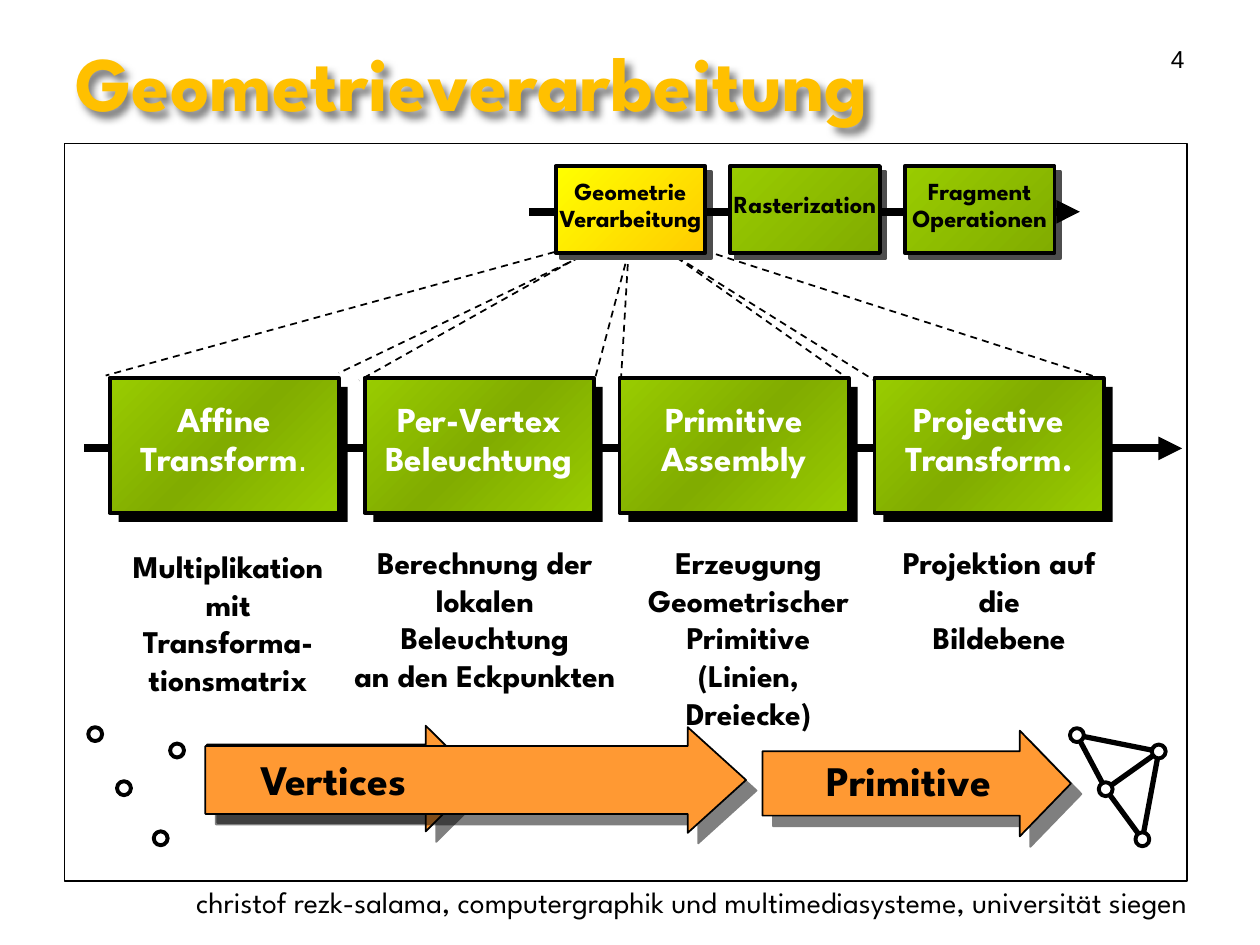
from dataclasses import dataclass

from lxml.etree import SubElement
from pptx import Presentation
from pptx.dml.color import RGBColor
from pptx.enum.dml import MSO_LINE
from pptx.enum.shapes import MSO_CONNECTOR, MSO_SHAPE
from pptx.enum.text import MSO_ANCHOR, PP_ALIGN
from pptx.oxml import parse_xml
from pptx.oxml.ns import nsdecls, qn
from pptx.slide import Slide
from pptx.util import Cm, Pt

BLACK, WHITE, ORANGE = "000000", "FFFFFF", "FF9933"
GREEN, DARK_GREEN = "99CC00", "81AC00"


def rgb(value):
    return RGBColor.from_string(value)


def add_shadow(shape, distance, blur=0):
    """Give a shape a half-transparent shadow towards the lower right."""
    effects = shape._element.spPr.get_or_add_effectLst()
    shadow = SubElement(effects, qn("a:outerShdw"), dist=str(Pt(distance)),
                        blurRad=str(Pt(blur)), dir="2700000", algn="ctr", rotWithShape="0")
    color = SubElement(shadow, qn("a:srgbClr"), val=BLACK)
    SubElement(color, qn("a:alpha"), val="50000")


def gradient_fill(shape, colors):
    """Fill a shape with evenly spaced colours from top left to bottom right."""
    step = 100000 // (len(colors) - 1)
    stops = "".join(f'<a:gs pos="{index * step}"><a:srgbClr val="{color}"/></a:gs>'
                    for index, color in enumerate(colors))
    properties = shape._element.spPr
    properties.find(qn("a:prstGeom")).addnext(parse_xml(
        f'<a:gradFill {nsdecls("a")}><a:gsLst>{stops}</a:gsLst>'
        '<a:lin ang="2700000" scaled="1"/></a:gradFill>'))


@dataclass
class Canvas:
    slide: Slide
    font: str = "League Spartan"

    def paint(self, shape, fill, line, width):
        shape.shadow.inherit = False
        if isinstance(fill, list):
            gradient_fill(shape, fill)
        elif fill:
            shape.fill.solid()
            shape.fill.fore_color.rgb = rgb(fill)
        else:
            shape.fill.background()
        if line:
            shape.line.color.rgb = rgb(line)
            shape.line.width = Pt(width)
        else:
            shape.line.fill.background()

    def shape(self, kind, left, top, width, height, fill=None, line=BLACK, weight=2.25):
        shape = self.slide.shapes.add_shape(kind, Cm(left), Cm(top), Cm(width), Cm(height))
        self.paint(shape, fill, line, weight)
        return shape

    def style(self, paragraph, size, color=BLACK, bold=True, align=PP_ALIGN.CENTER, font=None):
        paragraph.alignment = align
        paragraph.font.name = font or self.font
        paragraph.font.size = Pt(size)
        paragraph.font.bold = bold
        paragraph.font.color.rgb = rgb(color)

    def text(self, text, left, top, width, height, size, **style):
        box = self.slide.shapes.add_textbox(Cm(left), Cm(top), Cm(width), Cm(height))
        box.text_frame.word_wrap = True
        paragraph = box.text_frame.paragraphs[0]
        paragraph.text = text
        self.style(paragraph, size, **style)
        return box

    def stage(self, lines, left, top, width, height, offset, shade, shade_line, fill, size, color):
        """Draw a pipeline box on its hard shadow, with tightly set lines."""
        self.shape(MSO_SHAPE.RECTANGLE, left + offset, top + offset, width, height,
                   shade, shade_line)
        box = self.shape(MSO_SHAPE.RECTANGLE, left, top, width, height, fill)
        frame = box.text_frame
        frame.word_wrap = False
        frame.vertical_anchor = MSO_ANCHOR.MIDDLE
        frame.margin_left = frame.margin_right = frame.margin_top = frame.margin_bottom = 0
        frame.text = "\n".join(lines)
        for index, paragraph in enumerate(frame.paragraphs):
            self.style(paragraph, size, color)
            paragraph.line_spacing = 0.5
            if index:
                paragraph.space_before = Pt(size / 2)
        return box

    def line(self, x1, y1, x2, y2, weight, dashed=False, arrow=False):
        line = self.slide.shapes.add_connector(MSO_CONNECTOR.STRAIGHT,
                                               Cm(x1), Cm(y1), Cm(x2), Cm(y2))
        line.line.color.rgb = rgb(BLACK)
        line.line.width = Pt(weight)
        if dashed:
            line.line.dash_style = MSO_LINE.DASH
        if arrow:
            SubElement(line.line._get_or_add_ln(), qn("a:tailEnd"), type="triangle")
        SubElement(line._element.spPr, qn("a:effectLst"))

    def arrow(self, left, top, width, shaft, head):
        arrow = self.shape(MSO_SHAPE.RIGHT_ARROW, left, top, width, 2.13, ORANGE, weight=1)
        arrow.adjustments[0] = shaft
        arrow.adjustments[1] = head
        add_shadow(arrow, 8.5)

    def vertices(self, points, size=0.28):
        for x, y in points:
            self.shape(MSO_SHAPE.OVAL, x - size / 2, y - size / 2, size, size, WHITE)

    def mesh(self, points):
        """Join four points to two triangles that share an edge."""
        right, middle, left, bottom = points
        outline = [(Cm(x), Cm(y)) for x, y in (middle, bottom, right, left)]
        builder = self.slide.shapes.build_freeform(*outline[0], scale=1.0)
        builder.add_line_segments(outline[1:], close=True)
        self.paint(builder.convert_to_shape(), None, BLACK, 3)
        self.line(*middle, *right, 3)
        self.vertices(points)


def main():
    presentation = Presentation()
    presentation.slide_width, presentation.slide_height = Cm(25.4), Cm(19.05)
    canvas = Canvas(presentation.slides.add_slide(presentation.slide_layouts[6]))

    canvas.text("christof rezk-salama, computergraphik und multimediasysteme, universität siegen",
                -0.2, 17.7, 24.4, 0.97, 17, bold=False, align=PP_ALIGN.RIGHT)
    canvas.text("4", 22.63, 0.76, 1.5, 1.32, 14, bold=False, align=PP_ALIGN.RIGHT, font="Arial")
    canvas.shape(MSO_SHAPE.RECTANGLE, 1.3, 2.9, 22.63, 14.86, weight=0.75)
    title = canvas.text("Geometrieverarbeitung", 1.27, 0.76, 22.86, 1.75, 44,
                        color="FFC000", align=PP_ALIGN.LEFT)
    title.text_frame.vertical_anchor = MSO_ANCHOR.MIDDLE
    add_shadow(title, 4, blur=4)

    canvas.arrow(4.17, 14.63, 5.49, 0.642, 0.506)
    points = [(3.57, 15.13), (2.5, 15.89), (1.92, 14.8), (3.24, 16.9)]
    canvas.vertices(points)
    canvas.mesh([(x + 19.79, y + 0.02) for x, y in points])

    canvas.line(1.7, 9.04, 23.83, 9.04, 4.5, arrow=True)
    steps = [["Affine", "Transform"], ["Per-Vertex", "Beleuchtung"],
             ["Primitive", "Assembly"], ["Projective", "Transform."]]
    boxes = [canvas.stage(lines, 2.21 + 5.14 * index, 7.62, 4.62, 2.72, 0.18, BLACK, None,
                          [GREEN, DARK_GREEN, GREEN], 20, WHITE)
             for index, lines in enumerate(steps)]
    period = boxes[0].text_frame.paragraphs[1].add_run()
    period.text = "."
    period.font.name, period.font.size, period.font.bold = "DejaVu Sans", Pt(18), False

    descriptions = [
        ("Multiplikation\nmit Transforma-\ntionsmatrix", 2.24, 10.9, 4.72, 2.54),
        ("Berechnung der\nlokalen Beleuchtung\nan den Eckpunkten", 6.83, 10.82, 5.89, 2.54),
        ("Erzeugung\nGeometrischer\nPrimitive\n(Linien, Dreiecke)", 12.55, 10.82, 5.08, 3.3),
        ("Projektion auf die\nBildebene", 17.58, 10.82, 5.13, 1.78),
    ]
    for description in descriptions:
        canvas.text(*description, 18)

    canvas.arrow(4.14, 14.66, 10.9, 0.642, 0.552)
    canvas.arrow(15.37, 14.73, 6.22, 0.609, 0.484)
    canvas.text("Vertices", 4.78, 15.06, 3.89, 1.27, 24)
    canvas.text("Primitive", 16.03, 15.09, 4.6, 1.27, 24)

    zoom_lines = [
        (11.18, 5.08, 2.13, 7.57), (11.91, 5.08, 6.83, 7.52),
        (11.94, 5.03, 7.24, 7.67), (12.67, 5.08, 11.99, 7.65),
        (12.67, 5.08, 12.52, 7.62), (13.44, 5.05, 17.12, 7.65),
        (13.44, 5.05, 17.63, 7.67), (14.2, 5.05, 22.25, 7.65),
    ]
    for ends in zoom_lines:
        canvas.line(*ends, 1, dashed=True)

    overview = [(["Geometrie", "Verarbeitung"], ["FFFF00", "FFCC00"]),
                (["Rasterization"], [GREEN, DARK_GREEN]),
                (["Fragment", "Operationen"], [GREEN, DARK_GREEN])]
    for index, (lines, fill) in enumerate(overview):
        canvas.stage(lines, 11.2 + 3.52 * index, 3.35, 3.02, 1.75, 0.11, "4D4D4D", "4D4D4D",
                     fill, 14, BLACK)
    for index in range(4):
        left = 10.67 + 3.53 * index
        canvas.line(left, 4.27, left + 0.51, 4.27, 4.5, arrow=index == 3)

    presentation.save("out.pptx")


if __name__ == "__main__":
    main()
